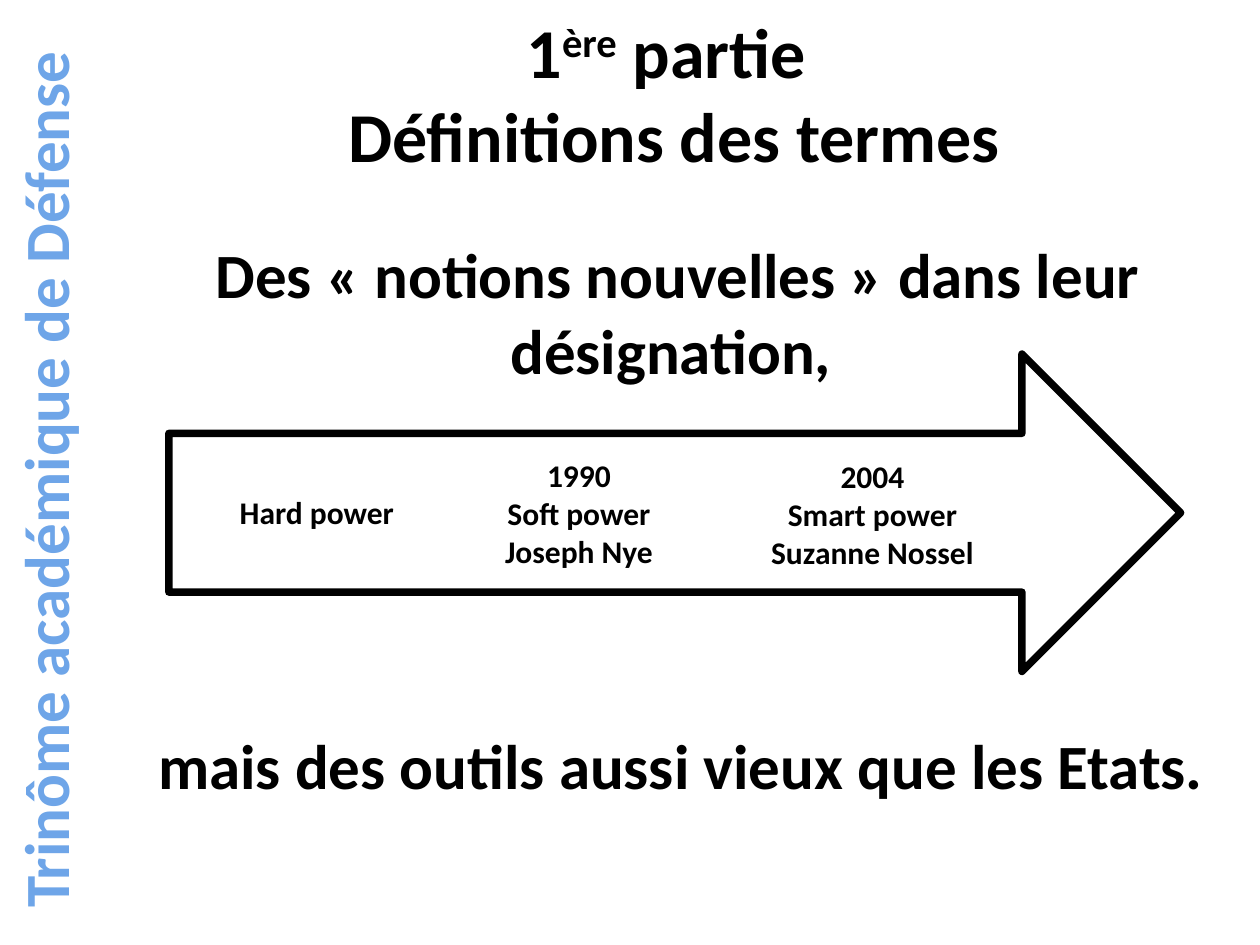
from pptx import Presentation
from pptx.dml.color import RGBColor
from pptx.enum.shapes import MSO_SHAPE
from pptx.enum.text import MSO_ANCHOR, MSO_AUTO_SIZE, PP_ALIGN
from pptx.oxml.ns import qn
from pptx.util import Pt
from lxml.etree import SubElement

COLOURS = {"ink": "000000", "banner": "6EA5E8"}


class SlideBuilder:
    font = "Calibri"

    def __init__(self, page):
        self.page = page

    def add_lines(self, box, lines, size, colour="ink", **frame_format):
        """Fill a box; a line is a string or a list of (text, baseline) spans."""
        frame = box.text_frame
        for name, value in {"word_wrap": True, **frame_format}.items():
            setattr(frame, name, value)
        for number, line in enumerate(lines):
            para = frame.paragraphs[0] if number == 0 else frame.add_paragraph()
            para.alignment = PP_ALIGN.CENTER
            for text, baseline in [(line, 0)] if isinstance(line, str) else line:
                span = para.add_run()
                span.text = text
                style = {"name": self.font, "size": Pt(size), "bold": True}
                for name, value in style.items():
                    setattr(span.font, name, value)
                span.font.color.rgb = RGBColor.from_string(COLOURS[colour])
                if baseline:
                    span.font._element.set("baseline", str(baseline * 1000))

    def text(self, place, lines, size, colour="ink", rotation=0):
        box = self.page.shapes.add_textbox(*map(Pt, place))
        box.rotation = rotation
        self.add_lines(box, lines, size, colour, auto_size=MSO_AUTO_SIZE.SHAPE_TO_FIT_TEXT)

    def shape(self, kind, place):
        shape = self.page.shapes.add_shape(kind, *map(Pt, place))
        shape.shadow.inherit = False
        shape.fill.background()
        shape.line.fill.background()
        return shape

    def arrow(self, place, width):
        arrow = self.shape(MSO_SHAPE.RIGHT_ARROW, place)
        arrow.line.color.rgb = RGBColor.from_string(COLOURS["ink"])
        arrow.line.width = Pt(width)
        # Rounded corners on the outline
        SubElement(arrow.line._get_or_add_ln(), qn("a:round"))

    def milestone(self, place, lines):
        box = self.shape(MSO_SHAPE.ROUNDED_RECTANGLE, place)
        self.add_lines(box, lines, 18, vertical_anchor=MSO_ANCHOR.MIDDLE)


def main():
    deck = Presentation()
    deck.slide_width, deck.slide_height = Pt(720), Pt(540)
    builder = SlideBuilder(deck.slides.add_slide(deck.slide_layouts[6]))

    # Side banner
    builder.text((-244.8, 244.8, 540, 50.4), ["Trinôme académique de Défense "],
                 36, "banner", rotation=270)

    # Heading and opening statement
    builder.text((50.4, 1.5, 669.6, 104.4),
                 [[("1", 0), ("ère", 30), (" partie ", 0)], "Définitions des termes"], 40)
    builder.text((59.8, 131, 655.2, 94.3),
                 ["Des « notions nouvelles » dans leur désignation, "], 36)

    # Timeline arrow with its milestones
    builder.arrow((96.5, 202.3, 578.2, 181.4), 4.25)
    milestones = [
        ((265.7, 247.7, 130.3, 90.7), ["1990", "Soft power", "Joseph Nye"]),
        ((427.7, 254.2, 141.8, 79.2), ["2004", "Smart power", "Suzanne Nossel"]),
        ((121.7, 255.6, 118.8, 73.4), ["Hard power"]),
    ]
    for place, lines in milestones:
        builder.milestone(place, lines)

    # Closing statement
    builder.text((58.3, 411.8, 661.7, 51.1),
                 ["mais des outils aussi vieux que les Etats."], 36)

    deck.save("out.pptx")


if __name__ == "__main__":
    main()
